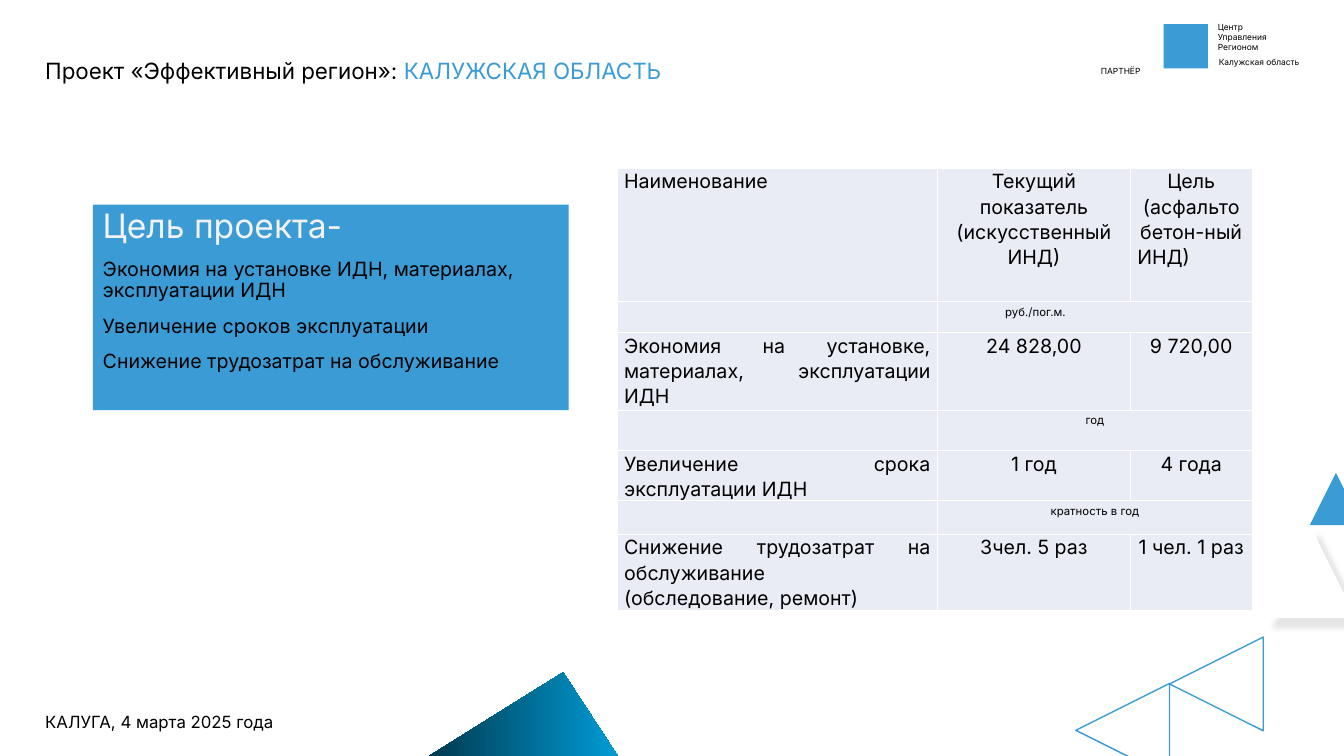
from dataclasses import dataclass

from lxml.etree import SubElement
from pptx import Presentation
from pptx.dml.color import RGBColor
from pptx.enum.shapes import MSO_SHAPE
from pptx.enum.text import PP_ALIGN
from pptx.oxml import parse_xml
from pptx.oxml.ns import nsdecls, qn
from pptx.util import Inches, Pt


@dataclass(frozen=True)
class Theme:
    font: str = "Inter"
    blue: str = "3A9BD5"
    cyan: str = "00AEEF"
    ink: str = "010101"
    black: str = "000000"
    white: str = "FFFFFF"
    pale: str = "F2F2F2"
    cell: str = "E9EBF5"
    shade: str = "BFBFBF"
    tiny: int = 6
    small: int = 12
    body: int = 14
    title: int = 16
    heading: int = 24


T = Theme()


@dataclass(frozen=True)
class Para:
    text: str
    size: float = T.body
    color: str = T.black
    align: PP_ALIGN = PP_ALIGN.LEFT
    spacing: float | Pt | None = None
    before: float = 0
    accent: str = ""
    raised: bool = False
    indent: float = 0


@dataclass(frozen=True)
class Label:
    x: float
    y: float
    w: float
    h: float
    paras: list[Para]


@dataclass(frozen=True)
class Triangle:
    x: float
    y: float
    w: float
    h: float
    rotation: int = 0
    fill: str = ""
    line: str = ""


def write(tf, paras: list[Para]) -> None:
    for i, para in enumerate(paras):
        p = tf.paragraphs[0] if i == 0 else tf.add_paragraph()
        p.alignment = para.align
        if para.spacing:
            p.line_spacing = para.spacing
        p.space_before = Pt(para.before)
        if para.indent:
            p._p.get_or_add_pPr().set("marL", str(Inches(para.indent)))
        p.font.name, p.font.size = T.font, Pt(para.size)
        r = p.add_run()
        r.text = para.text
        if para.raised:
            r._r.get_or_add_rPr().set("baseline", "30000")
        if para.accent:
            r.font.color.rgb = RGBColor.from_string(para.color)
            r = p.add_run()
            r.text = para.accent
            r.font.color.rgb = RGBColor.from_string(T.blue)
        else:
            p.font.color.rgb = RGBColor.from_string(para.color)


def add_label(slide, label: Label) -> None:
    sp = slide.shapes.add_textbox(*map(Inches, (label.x, label.y, label.w, label.h)))
    sp.text_frame.word_wrap = True
    write(sp.text_frame, label.paras)


def add_shape(slide, kind: MSO_SHAPE, box: tuple, fill: str = "", line: str = ""):
    sp = slide.shapes.add_shape(kind, *map(Inches, box))
    sp.shadow.inherit = False
    if fill:
        sp.fill.solid()
        sp.fill.fore_color.rgb = RGBColor.from_string(fill)
    else:
        sp.fill.background()
    if line:
        sp.line.color.rgb = RGBColor.from_string(line)
        sp.line.width = Pt(1)
    else:
        sp.line.fill.background()
    return sp


def add_triangle(slide, tri: Triangle):
    sp = add_shape(slide, MSO_SHAPE.ISOSCELES_TRIANGLE,
                   (tri.x, tri.y, tri.w, tri.h), tri.fill, tri.line)
    sp.rotation = tri.rotation
    return sp


def add_gradient(sp, stops: list[tuple[int, str]]) -> None:
    gs = "".join(f'<a:gs pos="{pos * 1000}"><a:srgbClr val="{color}"/></a:gs>'
                 for pos, color in stops)
    old = sp._element.spPr.find(qn("a:noFill"))
    old.getparent().replace(old, parse_xml(
        f'<a:gradFill {nsdecls("a")} rotWithShape="1"><a:gsLst>{gs}</a:gsLst>'
        '<a:lin ang="10800000" scaled="0"/></a:gradFill>'))


def add_shadow(sp) -> None:
    effects = sp._element.spPr.find(qn("a:effectLst"))
    effects.append(parse_xml(
        f'<a:outerShdw {nsdecls("a")} blurRad="{Pt(4)}" dist="{Pt(10)}" dir="2700000" '
        f'algn="tl" rotWithShape="0"><a:srgbClr val="{T.shade}">'
        '<a:alpha val="40000"/></a:srgbClr></a:outerShdw>'))


def style_cell(cell) -> None:
    cell.margin_left = cell.margin_right = Inches(0.07)
    cell.margin_top = cell.margin_bottom = 0
    tc_pr = cell._tc.get_or_add_tcPr()
    for side in ("lnL", "lnR", "lnT", "lnB"):
        ln = SubElement(tc_pr, qn(f"a:{side}"), w=str(Pt(1)))
        SubElement(SubElement(ln, qn("a:solidFill")), qn("a:srgbClr"), val=T.white)
    cell.fill.solid()
    cell.fill.fore_color.rgb = RGBColor.from_string(T.cell)


def cell_para(text: str, align: PP_ALIGN = PP_ALIGN.CENTER, **extra) -> Para:
    return Para(text, align=align, spacing=1.07, **extra)


def add_goals_table(slide) -> None:
    left, both = PP_ALIGN.LEFT, PP_ALIGN.JUSTIFY
    cols = [3.18, 1.91, 1.21]
    heights = [1.32, 0.31, 0.77, 0.4, 0.5, 0.33, 0.76]
    # A row with two entries is a unit row: its second cell spans two columns
    rows = [
        [[cell_para("Наименование", left)],
         [cell_para("Текущий показатель"), cell_para("(искусственный ИНД)")],
         [cell_para("Цель"), cell_para("(асфальтобетон-ный"), cell_para("ИНД)", left)]],
        [[], [cell_para("руб./пог.м.", left, raised=True, indent=0.6)]],
        [[cell_para("Экономия на установке, материалах, эксплуатации ИДН", both)],
         [cell_para("24 828,00")], [cell_para("9 720,00")]],
        [[], [cell_para("год", raised=True)]],
        [[cell_para("Увеличение срока эксплуатации ИДН", both)],
         [cell_para("1 год")], [cell_para("4 года")]],
        [[], [cell_para("кратность в год", raised=True)]],
        [[cell_para("Снижение трудозатрат на обслуживание", both),
          cell_para("(обследование, ремонт)", both)],
         [cell_para("3чел. 5 раз")], [cell_para("1 чел. 1 раз")]],
    ]
    box = (6.12, 1.67, sum(cols), sum(heights))
    table = slide.shapes.add_table(len(rows), len(cols), *map(Inches, box)).table
    table.first_row = table.horz_banding = False
    for col, width in zip(table.columns, cols):
        col.width = Inches(width)
    for i, (row, height) in enumerate(zip(rows, heights)):
        table.rows[i].height = Inches(height)
        for j in range(len(cols)):
            style_cell(table.cell(i, j))
        if len(row) == 2:
            table.cell(i, 1).merge(table.cell(i, 2))
        for j, paras in enumerate(row):
            write(table.cell(i, j).text_frame, paras)


def main() -> None:
    prs = Presentation()
    prs.slide_width, prs.slide_height = Inches(13.33), Inches(7.5)
    slide = prs.slides.add_slide(prs.slide_layouts[6])

    # Emblem block, title and date
    add_shape(slide, MSO_SHAPE.RECTANGLE, (11.54, 0.24, 0.44, 0.44), T.blue)
    center = ["Центр", "Управления", "Регионом"]
    for label in (
        Label(11.98, 0.17, 1.35, 0.4, [Para(word, T.tiny) for word in center]),
        Label(11.99, 0.52, 1.34, 0.2, [Para("Калужская область", T.tiny)]),
        Label(10.73, 0.61, 0.77, 0.2, [Para("ПАРТНЁР", T.tiny, align=PP_ALIGN.CENTER)]),
        Label(0.35, -0.08, 6.6, 0.81, [Para("Проект «Эффективный регион»: ", T.title,
              spacing=Pt(62), accent="КАЛУЖСКАЯ ОБЛАСТЬ")]),
        Label(0.35, 6.35, 2.8, 0.81, [Para("КАЛУГА, 4 марта 2025 года", T.small,
              spacing=Pt(62))]),
    ):
        add_label(slide, label)

    # Decorative triangles
    peak = add_triangle(slide, Triangle(2.93, 6.67, 3.74, 1.66))
    peak.adjustments[0] = 0.71
    add_gradient(peak, [(0, T.ink), (5, T.cyan), (93, T.ink), (100, T.cyan)])
    for tri in (Triangle(11.6, 6.32, 0.93, 0.93, 270, line=T.blue),
                Triangle(10.67, 6.78, 0.93, 0.93, 270, line=T.blue),
                Triangle(12.99, 4.69, 0.52, 0.52, fill=T.blue)):
        add_triangle(slide, tri)
    add_shadow(add_triangle(slide, Triangle(12.52, 5.2, 0.93, 0.93, fill=T.white)))

    # Project goal panel
    panel = add_shape(slide, MSO_SHAPE.RECTANGLE, (0.92, 2.03, 4.72, 2.04), T.blue)
    tf = panel.text_frame
    tf.word_wrap = True
    tf.vertical_anchor = 1
    goals = ["Экономия на установке ИДН, материалах, эксплуатации ИДН",
             "Увеличение сроков эксплуатации", "Снижение трудозатрат на обслуживание"]
    write(tf, [Para("Цель проекта-", T.heading, T.pale, spacing=0.9)]
          + [Para(goal, spacing=0.9, before=10) for goal in goals])

    add_goals_table(slide)
    prs.save("out.pptx")


if __name__ == "__main__":
    main()
